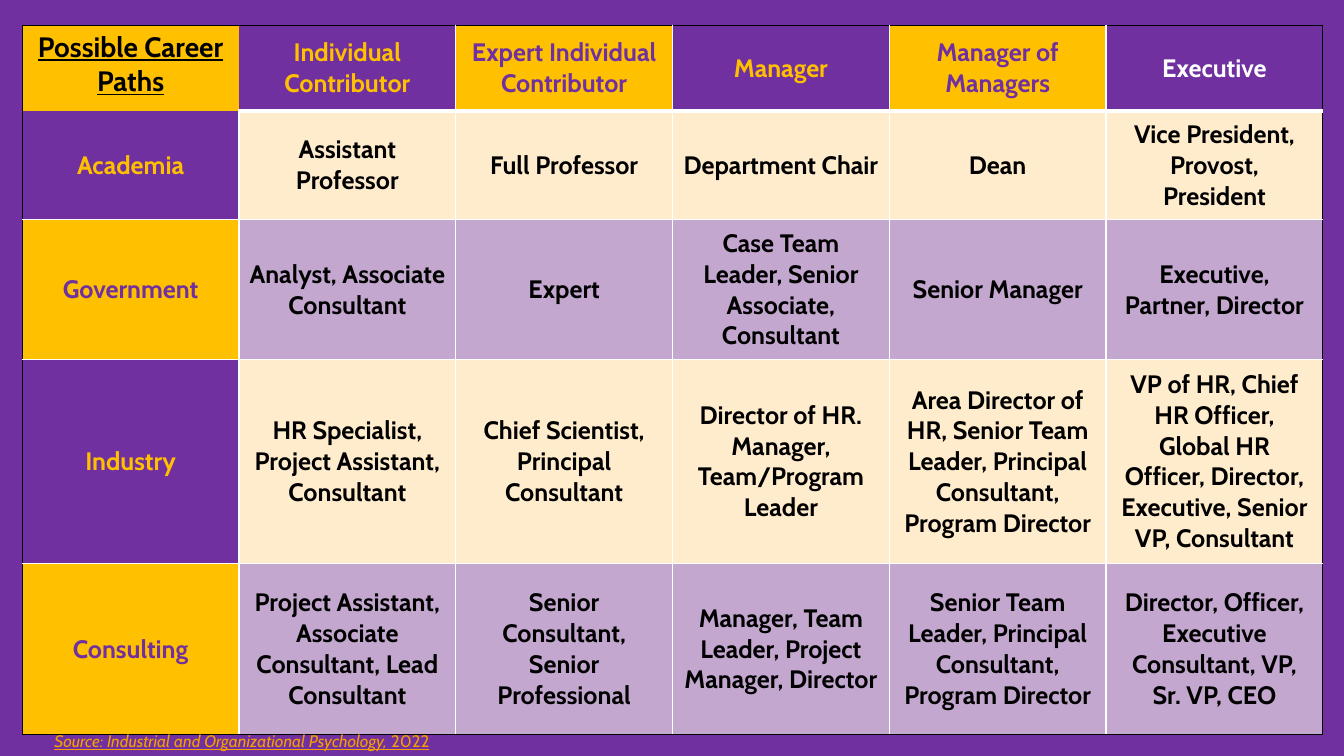
import pptx
import pptx.util
import pptx.dml.color
import pptx.enum.shapes
import pptx.enum.text
from lxml import etree
from pptx.dml.color import RGBColor
from pptx.util import Inches

PURPLE = RGBColor(0x70, 0x30, 0xA0)
GOLD = RGBColor(0xFF, 0xC0, 0x00)
CREAM = RGBColor(0xFF, 0xEC, 0xCC)
LILAC = RGBColor(0xC3, 0xA7, 0xCF)
ORANGE = RGBColor(0xF5, 0x9E, 0x00)
BLACK = RGBColor(0, 0, 0)
WHITE = RGBColor(0xFF, 0xFF, 0xFF)

FONT = "Cabin"
DRAWING_NS = "http://schemas.openxmlformats.org/drawingml/2006/main"
COLUMN_WIDTH = 2.15
ROW_HEIGHTS = [0.85, 1.08, 1.39, 2.02, 1.7]

CAREERS = [
    ["Possible Career Paths", "Individual Contributor",
     "Expert Individual Contributor", "Manager", "Manager of Managers",
     "Executive"],
    ["Academia", "Assistant Professor", "Full Professor", "Department Chair",
     "Dean", "Vice President, Provost, President"],
    ["Government", "Analyst, Associate Consultant", "Expert",
     "Case Team Leader, Senior Associate, Consultant", "Senior Manager",
     "Executive, Partner, Director"],
    ["Industry", "HR Specialist, Project Assistant, Consultant",
     "Chief Scientist, Principal Consultant",
     "Director of HR. Manager, Team/Program Leader",
     "Area Director of HR, Senior Team Leader, Principal Consultant, "
     "Program\u00a0Director",
     "VP of HR, Chief HR Officer, Global HR Officer, Director, Executive, "
     "Senior VP, Consultant"],
    ["Consulting", "Project Assistant, Associate Consultant, Lead Consultant",
     "Senior Consultant, Senior Professional",
     "Manager, Team Leader, Project Manager, Director",
     "Senior Team Leader, Principal Consultant, Program Director",
     "Director, Officer, Executive Consultant, VP, Sr. VP, CEO"],
]
LAST_ROW = len(CAREERS) - 1
LAST_COLUMN = len(CAREERS[0]) - 1


def cell_colors(row, column):
    """Return fill and text colour; headings alternate gold and purple."""
    if row and column:
        return (CREAM if row % 2 else LILAC), BLACK
    if row == column == 0:
        return GOLD, BLACK
    if (row, column) == (0, LAST_COLUMN):
        return PURPLE, WHITE
    return (PURPLE, GOLD) if (row + column) % 2 else (GOLD, PURPLE)


def cell_borders(row, column):
    """Return (colour, points) per side: black outside, white inside."""
    inner, outer, heavy, none = (WHITE, 1), (BLACK, 1), (WHITE, 3), None
    left = outer if column == 0 else inner
    right = outer if column == LAST_COLUMN else inner
    top = outer if row == 0 else heavy if row == 1 else inner
    bottom = outer if row == LAST_ROW else heavy if row == 0 else inner
    # The corner cell has no lines towards its neighbours
    if (row, column) == (0, 0):
        right = bottom = none
    elif (row, column) == (0, 1):
        left = none
    elif (row, column) == (1, 0):
        top = none
    return {"lnL": left, "lnR": right, "lnT": top, "lnB": bottom}


def draw_borders(cell, borders):
    properties = cell._tc.get_or_add_tcPr()
    for side, border in borders.items():
        line = etree.SubElement(properties, f"{{{DRAWING_NS}}}{side}")
        if border is None:
            line.set("w", "0")
            etree.SubElement(line, f"{{{DRAWING_NS}}}noFill")
            continue
        color, points = border
        line.set("w", str(pptx.util.Pt(points)))
        fill = etree.SubElement(line, f"{{{DRAWING_NS}}}solidFill")
        etree.SubElement(fill, f"{{{DRAWING_NS}}}srgbClr", val=str(color))


def set_font(font, size, color):
    font.name = FONT
    font.size = pptx.util.Pt(size)
    font.color.rgb = color


def fill_cell(cell, row, column):
    fill_color, text_color = cell_colors(row, column)
    is_corner = row == column == 0
    draw_borders(cell, cell_borders(row, column))
    cell.fill.solid()
    cell.fill.fore_color.rgb = fill_color
    anchors = pptx.enum.text.MSO_ANCHOR
    cell.vertical_anchor = anchors.TOP if is_corner else anchors.MIDDLE
    cell.text = CAREERS[row][column]
    paragraph = cell.text_frame.paragraphs[0]
    paragraph.alignment = pptx.enum.text.PP_ALIGN.CENTER
    set_font(paragraph.font, 20 if is_corner else 18, text_color)
    paragraph.font.bold = True
    paragraph.font.underline = is_corner


def add_panel(slide):
    panel = slide.shapes.add_shape(
        pptx.enum.shapes.MSO_SHAPE.RECTANGLE,
        Inches(0.25), Inches(0.27), Inches(12.82), Inches(6.97))
    panel.shadow.inherit = False
    panel.fill.solid()
    panel.fill.fore_color.rgb = WHITE
    panel.line.color.rgb = BLACK
    panel.line.width = pptx.util.Pt(1)


def add_career_table(slide):
    careers = slide.shapes.add_table(
        len(CAREERS), len(CAREERS[0]), Inches(0.22), Inches(0.25),
        Inches(COLUMN_WIDTH * len(CAREERS[0])),
        Inches(sum(ROW_HEIGHTS))).table
    careers.horz_banding = False
    for column in careers.columns:
        column.width = Inches(COLUMN_WIDTH)
    for row, height in enumerate(ROW_HEIGHTS):
        careers.rows[row].height = Inches(height)
        for column in range(len(CAREERS[row])):
            fill_cell(careers.cell(row, column), row, column)


def add_source(slide):
    source = slide.shapes.add_textbox(
        Inches(0.44), Inches(7.2), Inches(4), Inches(0.3)).text_frame
    source.word_wrap = True
    paragraph = source.paragraphs[0]
    set_font(paragraph.font, 12, ORANGE)
    paragraph.font.underline = True
    title = paragraph.add_run()
    title.text = "Source: Industrial\u00a0and Organizational Psychology,"
    title.font.italic = True
    year = paragraph.add_run()
    year.text = "\u00a02022"


def main():
    deck = pptx.Presentation()
    deck.slide_width = Inches(13.33)
    deck.slide_height = Inches(7.5)
    slide = deck.slides.add_slide(deck.slide_layouts[6])
    slide.background.fill.solid()
    slide.background.fill.fore_color.rgb = PURPLE

    add_panel(slide)
    add_career_table(slide)
    add_source(slide)
    deck.save("out.pptx")


main()
